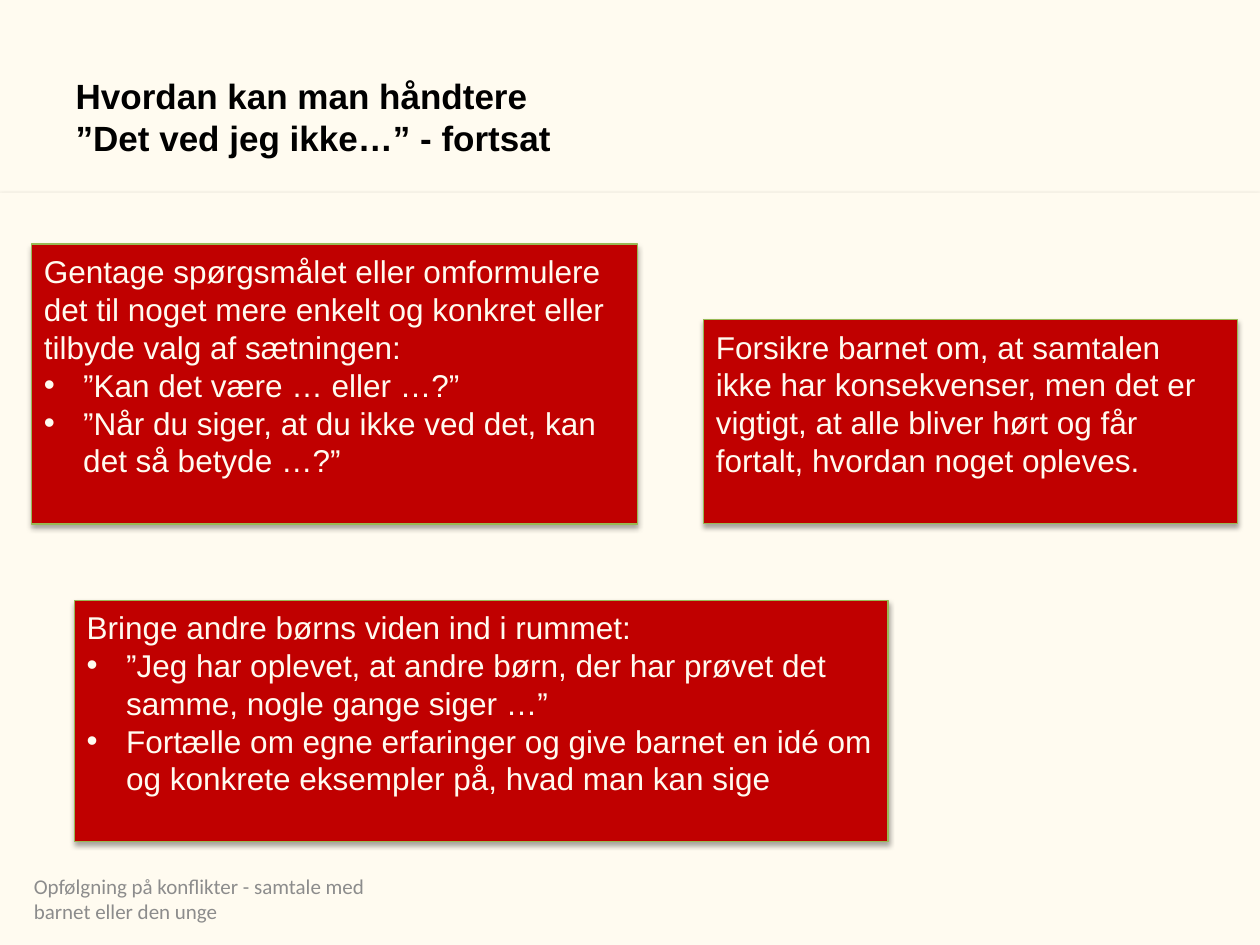
import pptx
import pptx.util
import pptx.dml.color
import pptx.enum.shapes
import pptx.enum.text
import pptx.oxml
import pptx.oxml.ns

Pt = pptx.util.Pt
RGBColor = pptx.dml.color.RGBColor
ANCHOR = pptx.enum.text.MSO_ANCHOR
ALIGN = pptx.enum.text.PP_ALIGN

CREAM = RGBColor(0xFF, 0xFB, 0xF0)
RED = RGBColor(0xC0, 0x00, 0x00)
GREEN = RGBColor(0x98, 0xB9, 0x55)
BLACK = RGBColor(0x00, 0x00, 0x00)
GREY = RGBColor(0x8C, 0x8C, 0x8C)

TITLE_FONT = {"name": "Arial", "size": Pt(20), "bold": True}
ADVICE_FONT = {"name": "Arial", "size": Pt(18)}
FOOTER_FONT = {"name": "Calibri", "size": Pt(12)}
FRAME = {"word_wrap": True, "vertical_anchor": ANCHOR.MIDDLE,
         "auto_size": pptx.enum.text.MSO_AUTO_SIZE.NONE}
ADVICE_BOTTOM = Pt(24.3)  # one free line below the advice
BULLET_INDENT = Pt(22.5)

SHADOW = (
    f'<a:effectLst {pptx.oxml.ns.nsdecls("a")}>'
    f'<a:outerShdw blurRad="{Pt(3.1)}" dist="{Pt(1.8)}" dir="5400000" rotWithShape="0">'
    '<a:srgbClr val="000000"><a:alpha val="35000"/></a:srgbClr>'
    '</a:outerShdw></a:effectLst>')

# Each advice: box in points, opening line, bulleted examples
ADVICE = [
    ((18, 139.5, 346.5, 160),
     "Gentage spørgsmålet eller omformulere det til noget mere enkelt og konkret "
     "eller tilbyde valg af sætningen:",
     ["”Kan det være … eller …?”",
      "”Når du siger, at du ikke ved det, kan det så betyde …?”"]),
    ((402, 182.5, 305, 116.5),
     "Forsikre barnet om, at samtalen ikke har konsekvenser, men det er vigtigt, "
     "at alle bliver hørt og får fortalt, hvordan noget opleves.",
     []),
    ((42.5, 343, 465, 138),
     "Bringe andre børns viden ind i rummet:",
     ["”Jeg har oplevet, at andre børn, der har prøvet det samme, "
      "nogle gange siger …”",
      "Fortælle om egne erfaringer og give barnet en idé om og konkrete "
      "eksempler på, hvad man kan sige"]),
]


def apply(target, values):
    for name, value in values.items():
        setattr(target, name, value)


def place(shape, box):
    apply(shape, dict(zip(("left", "top", "width", "height"), map(Pt, box))))


def format_text(frame, font, color):
    apply(frame, FRAME)
    for paragraph in frame.paragraphs:
        paragraph.alignment = ALIGN.LEFT
        for run in paragraph.runs:
            apply(run.font, font)
            run.font.color.rgb = color


def add_shadowed_box(slide, box, color):
    panel = slide.shapes.add_shape(
        pptx.enum.shapes.MSO_SHAPE.RECTANGLE, *map(Pt, box))
    panel.fill.solid()
    panel.fill.fore_color.rgb = color
    panel.line.fill.background()
    panel._element.spPr.append(pptx.oxml.parse_xml(SHADOW))
    return panel


def add_bullet(paragraph):
    properties = paragraph._p.get_or_add_pPr()
    properties.set("marL", str(BULLET_INDENT))
    properties.set("indent", str(-BULLET_INDENT))
    for tag, name, value in (("a:buFont", "typeface", "Arial"),
                             ("a:buChar", "char", "•")):
        mark = pptx.oxml.parse_xml(
            f'<{tag} {pptx.oxml.ns.nsdecls("a")} {name}="{value}"/>')
        properties.append(mark)


def add_title(slide, box):
    title = slide.shapes.title
    place(title, box)
    title.text_frame.text = "Hvordan kan man håndtere\v”Det ved jeg ikke…” - fortsat"
    format_text(title.text_frame, TITLE_FONT, BLACK)
    # Keep the title in front of the content panel
    slide.shapes._spTree.append(title._element)


def add_advice(slide, box, opening, examples):
    advice = add_shadowed_box(slide, box, RED)
    advice.line.color.rgb = GREEN
    advice.line.width = Pt(0.75)
    frame = advice.text_frame
    frame.text = opening
    for example in examples:
        paragraph = frame.add_paragraph()
        paragraph.text = example
        add_bullet(paragraph)
    format_text(frame, ADVICE_FONT, CREAM)
    frame.margin_bottom = ADVICE_BOTTOM


def add_footer(slide, box):
    footer = slide.shapes.add_textbox(*map(Pt, box))
    footer.text_frame.text = "Opfølgning på konflikter - samtale med barnet eller den unge"
    format_text(footer.text_frame, FOOTER_FONT, GREY)


def main():
    deck = pptx.Presentation()
    deck.slide_width, deck.slide_height = Pt(720), Pt(540)
    slide = deck.slides.add_slide(deck.slide_layouts.get_by_name("Title Only"))
    slide.background.fill.solid()
    slide.background.fill.fore_color.rgb = CREAM

    # Content panel, whose shadow draws the rule under the title
    add_shadowed_box(slide, (0, 110, 720, 430), CREAM)
    add_title(slide, (36, 21.6, 648, 90))
    for box, opening, examples in ADVICE:
        add_advice(slide, box, opening, examples)
    add_footer(slide, (12.25, 499, 228, 28.8))
    deck.save("out.pptx")


if __name__ == "__main__":
    main()
